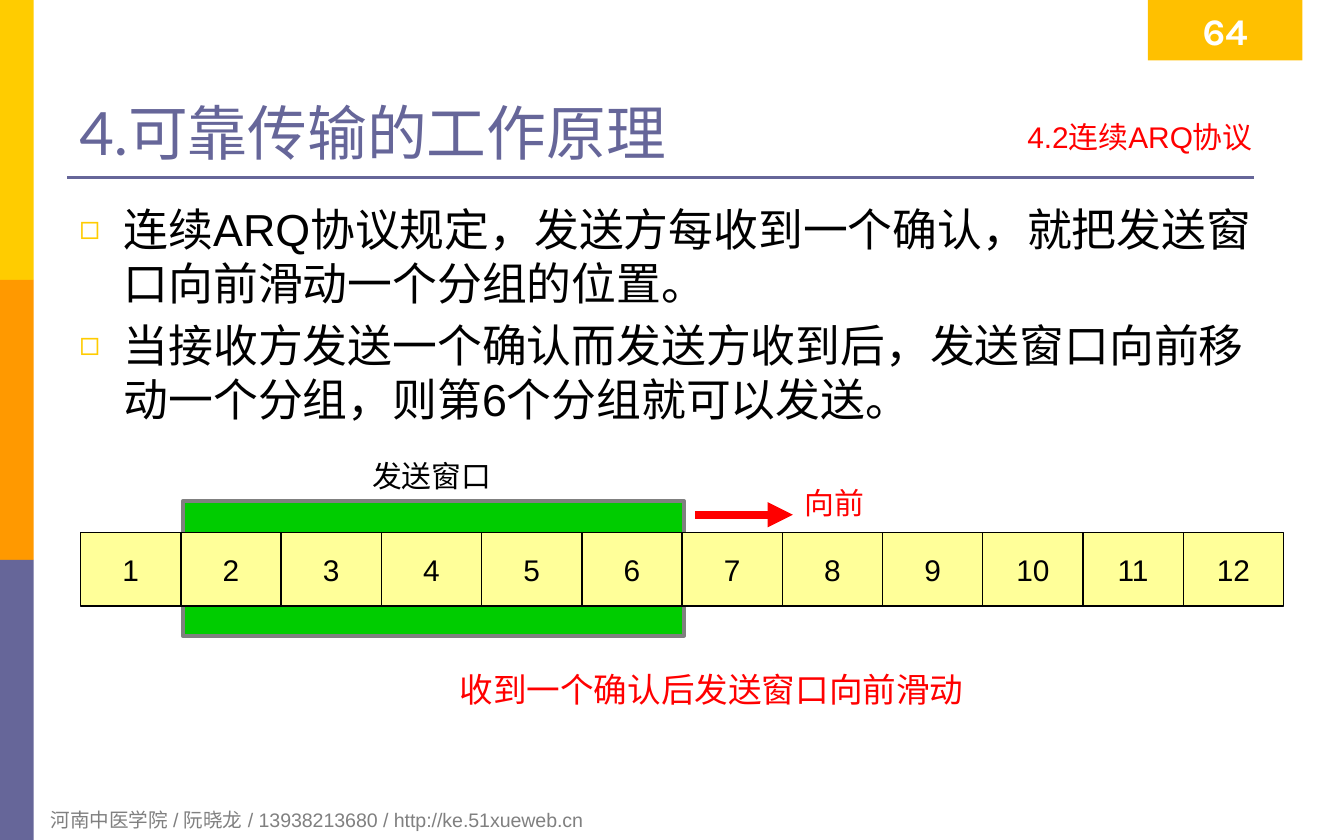
from lxml.etree import SubElement
from pptx import Presentation
from pptx.dml.color import RGBColor
from pptx.enum.shapes import MSO_CONNECTOR, MSO_SHAPE
from pptx.enum.text import MSO_ANCHOR, MSO_AUTO_SIZE, PP_ALIGN
from pptx.oxml.ns import qn
from pptx.util import Inches, Pt

COLORS = {
    "yellow": "FFCC00", "orange": "FF9900", "purple": "666699",
    "amber": "FFC000", "green": "00CC00", "cell": "FFFF99",
    "red": "FF0000", "gray": "808080", "black": "000000", "white": "FFFFFF",
}

presentation = Presentation()
presentation.slide_width = Inches(10)
presentation.slide_height = Inches(6.25)
slide = presentation.slides.add_slide(presentation.slide_layouts[3])
shapes = slide.shapes


def write(shape, *texts, box=None, size=16, color="black", font="Arial", bold=False,
          align=PP_ALIGN.LEFT, anchor=MSO_ANCHOR.TOP, wrap=True, bullet=None,
          space_before=0, inset=(0.1, 0.05)):
    """Place a shape and fill it with formatted paragraphs."""
    if box:
        shape.left, shape.top, shape.width, shape.height = map(Inches, box)
    frame = shape.text_frame
    frame.auto_size = MSO_AUTO_SIZE.NONE
    frame.word_wrap = wrap
    frame.vertical_anchor = anchor
    frame.margin_left = frame.margin_right = Inches(inset[0])
    frame.margin_top = frame.margin_bottom = Inches(inset[1])
    for index, text in enumerate(texts):
        paragraph = frame.add_paragraph() if index else frame.paragraphs[0]
        paragraph.alignment = align
        paragraph.space_before = Pt(space_before if index else 0)
        properties = paragraph._p.get_or_add_pPr()
        indent = Inches(0.33) if bullet else 0
        properties.set("marL", str(indent))
        properties.set("indent", str(-indent))
        if bullet:
            bullet_color = SubElement(properties, qn("a:buClr"))
            SubElement(bullet_color, qn("a:srgbClr"), val=COLORS["yellow"])
            SubElement(properties, qn("a:buSzPct"), val="75000")
            SubElement(properties, qn("a:buChar"), char=bullet)
        else:
            SubElement(properties, qn("a:buNone"))
        run = paragraph.add_run()
        run.text = text
        run.font.size = Pt(size)
        run.font.bold = bold
        run.font.name = font
        run.font.color.rgb = RGBColor.from_string(COLORS[color])
        SubElement(run._r.get_or_add_rPr(), qn("a:ea"), typeface="Arial")


def draw(kind, box, color, width=None, line_color=None):
    """Add a filled rectangle, or a straight line when kind is a connector."""
    if kind is MSO_CONNECTOR.STRAIGHT:
        shape = shapes.add_connector(kind, *map(Inches, box))
        SubElement(shape._element.spPr, qn("a:effectLst"))
        line_color = color
    else:
        shape = shapes.add_shape(kind, *map(Inches, box))
        shape.shadow.inherit = False
        shape.fill.solid()
        shape.fill.fore_color.rgb = RGBColor.from_string(COLORS[color])
    if line_color:
        shape.line.color.rgb = RGBColor.from_string(COLORS[line_color])
        shape.line.width = Pt(width)
    else:
        shape.line.fill.background()
    return shape


# Side bands, title rule and footer
band_height = 6.25 / 3
for index, color in enumerate(("yellow", "orange", "purple")):
    draw(MSO_SHAPE.RECTANGLE, (0, index * band_height, 0.25, band_height), color)
draw(MSO_CONNECTOR.STRAIGHT, (0.5, 1.32, 9.33, 1.32), "purple", 1.5)
write(shapes.add_textbox(0, 0, 0, 0),
      "河南中医学院 / 阮晓龙 / 13938213680 / http://ke.51xueweb.cn",
      box=(0.28, 5.96, 6.77, 0.28), size=10.5, color="gray")

# Title, section label and page number
title, body, section = slide.placeholders
write(title, "4.可靠传输的工作原理", box=(0.5, 0.25, 9, 1.04), size=32, color="purple",
      font="Lato", anchor=MSO_ANCHOR.BOTTOM, inset=(0.09, 0.04))
write(section, "4.2连续ARQ协议", box=(6.26, 0.84, 3.15, 0.39), color="red",
      align=PP_ALIGN.RIGHT, inset=(0.09, 0.04))
page_number = draw(MSO_SHAPE.RECTANGLE, (8.54, 0, 1.15, 0.45), "amber")
write(page_number, "64", size=20, color="white", font="Karla", bold=True,
      align=PP_ALIGN.CENTER, anchor=MSO_ANCHOR.MIDDLE, inset=(0.09, 0.04))

# Explanation
write(body,
      "连续ARQ协议规定，发送方每收到一个确认，就把发送窗口向前滑动一个分组的位置。",
      "当接收方发送一个确认而发送方收到后，发送窗口向前移动一个分组，则第6个分组就可以发送。",
      box=(0.5, 1.46, 9, 4.13), size=24, bullet="◻", space_before=4.8, inset=(0.09, 0.04))

# Sending window behind the row of packets
packet_count = 12
row_left, row_top, row_width, row_height = 0.6, 3.96, 8.95, 0.55
packet_width = row_width / packet_count
draw(MSO_SHAPE.RECTANGLE, (1.36, 3.73, 3.73, 1), "green", 2.25, "gray")
draw(MSO_SHAPE.RECTANGLE, (row_left, row_top, row_width, row_height), "cell", 0.75, "black")
for index in range(packet_count):
    left = row_left + index * packet_width
    write(shapes.add_textbox(0, 0, 0, 0), str(index + 1),
          box=(left, row_top, packet_width, row_height),
          align=PP_ALIGN.CENTER, anchor=MSO_ANCHOR.MIDDLE, wrap=False)
    if index:
        draw(MSO_CONNECTOR.STRAIGHT, (left, row_top, left, row_top + row_height), "black", 0.75)

# Forward arrow
arrow = draw(MSO_CONNECTOR.STRAIGHT, (5.17, 3.83, 5.9, 3.83), "red", 4.5)
SubElement(arrow.line._get_or_add_ln(), qn("a:tailEnd"), type="triangle")

# Diagram labels
for text, box, size, color in (
    ("发送窗口", (2.67, 3.36, 1.1, 0.37), 16, "black"),
    ("向前", (5.89, 3.56, 0.65, 0.37), 16, "red"),
    ("收到一个确认后发送窗口向前滑动", (3.32, 4.93, 3.99, 0.4), 18, "red"),
):
    write(shapes.add_textbox(0, 0, 0, 0), text, box=box, size=size, color=color, wrap=False)

presentation.save("out.pptx")
